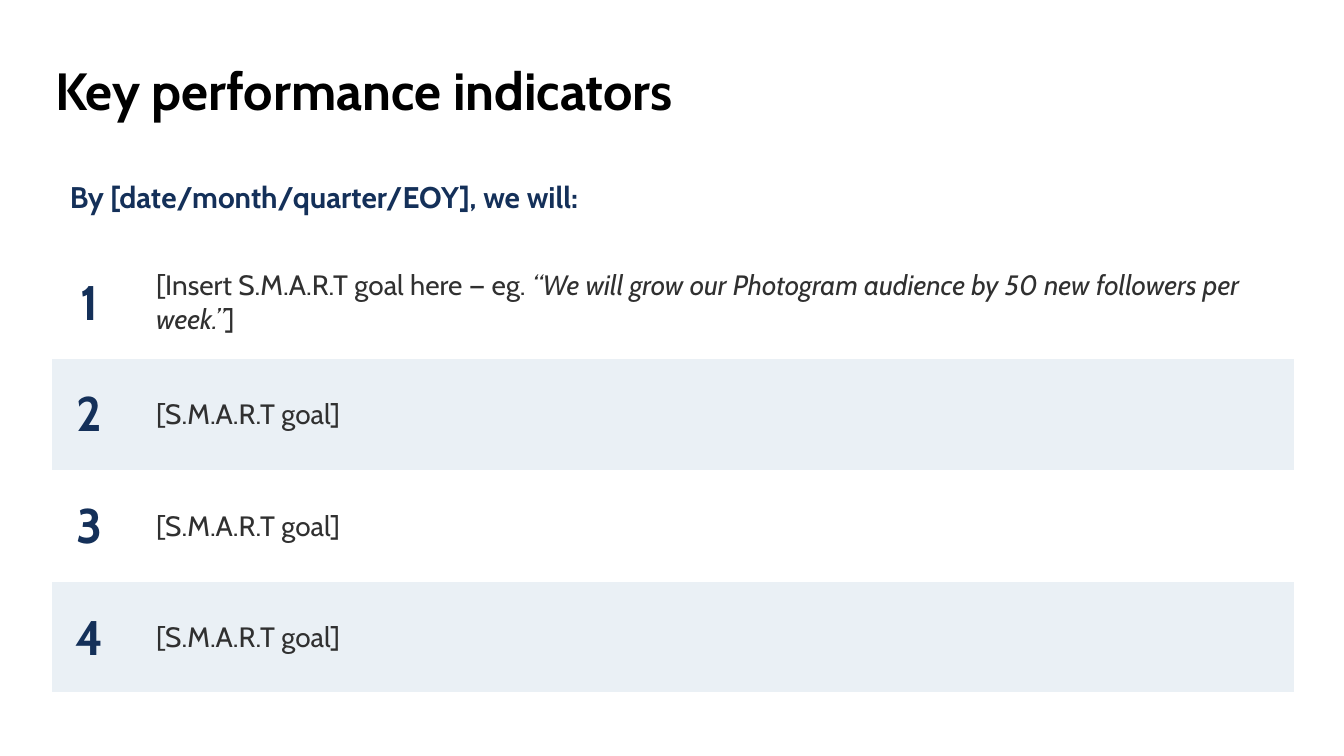
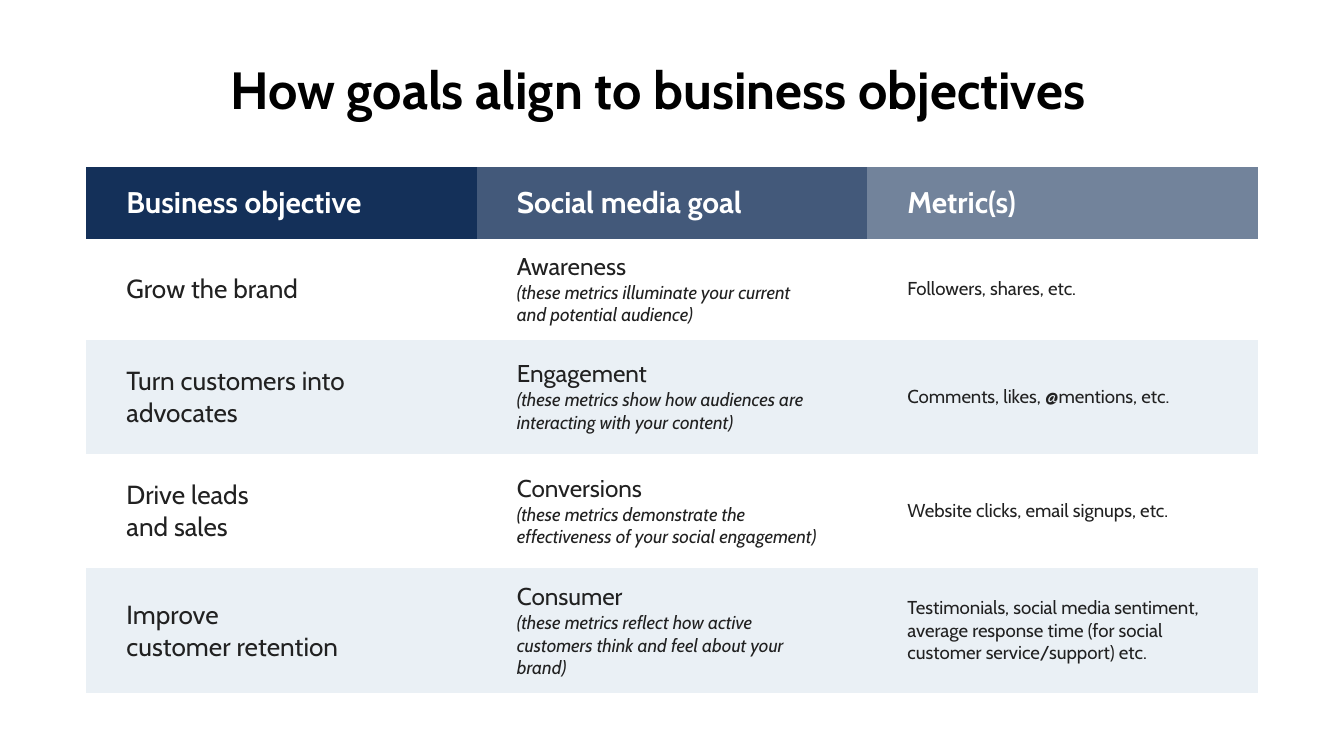
from lxml.etree import SubElement
from pptx import Presentation
from pptx.dml.color import RGBColor
from pptx.enum.shapes import MSO_SHAPE
from pptx.enum.text import MSO_ANCHOR, MSO_AUTO_SIZE, PP_ALIGN
from pptx.oxml.ns import qn
from pptx.util import Cm, Pt

COLOURS = {
    "black": "000000", "white": "FFFFFF", "navy": "143059",
    "slate": "43597A", "steel": "72839B", "band": "EAF0F5",
    "goal": "303030", "body": "212121",
}
FONT = "Cabin"
NO_TABLE_STYLE = "{2D5ABB26-0587-4C30-8999-92F81FD0307C}"
INSET = 0.25

DEADLINE = "By [date/month/quarter/EOY], we will:"
GOALS = [
    [("[Insert S.M.A.R.T goal here — eg. ", {}),
     ("“We will grow our Photogram audience by 50 new followers per week.”",
      {"italic": True}),
     ("]", {})],
    "[S.M.A.R.T goal]",
    "[S.M.A.R.T goal]",
    "[S.M.A.R.T goal]",
]
GOAL_COLUMNS = [1.5, 22.05]
GOAL_ROW = 2.11

HEADERS = [("Business objective", "navy"), ("Social media goal", "slate"),
           ("Metric(s)", "steel")]
OBJECTIVES = [
    ("Grow the brand", "Awareness",
     "(these metrics illuminate your current \nand potential audience)",
     "Followers, shares, etc."),
    ("Turn customers into advocates", "Engagement",
     "(these metrics show how audiences are interacting with your content)",
     "Comments, likes, @mentions, etc."),
    ("Drive leads \nand sales", "Conversions",
     "(these metrics demonstrate the effectiveness of your social engagement)",
     "Website clicks, email signups, etc."),
    ("Improve \ncustomer retention", "Consumer",
     "(these metrics reflect how active customers think and feel about your brand)",
     "Testimonials, social media sentiment, average response time "
     "(for social customer service/support) etc."),
]
OBJECTIVE_COLUMNS = [7.38] * 3
OBJECTIVE_ROWS = [1.36, 1.91, 2.16, 2.16, 2.36]


def colour(name):
    return RGBColor.from_string(COLOURS[name])


def write(frame, text, size, color, bold=False, italic=False,
          align=PP_ALIGN.LEFT, spacing=1.0):
    """Fill a text frame with a string or with (text, format changes) pairs."""
    paragraph = frame.paragraphs[0]
    paragraph.alignment = align
    paragraph.line_spacing = spacing
    paragraph.space_before = paragraph.space_after = Pt(0)
    pieces = [(text, {})] if isinstance(text, str) else text
    for piece, changes in pieces:
        look = {"size": size, "bold": bold, "italic": italic} | changes
        for number, line in enumerate(piece.split("\n")):
            if number:
                paragraph.add_line_break()
            if not line:
                continue
            run = paragraph.add_run()
            run.text = line
            run.font.name = FONT
            run.font.size = Pt(look["size"])
            run.font.bold = look["bold"]
            run.font.italic = look["italic"]
            run.font.color.rgb = colour(color)


def set_box(shape, left, top, width, height, inset_left=INSET):
    shape.left, shape.top = Cm(left), Cm(top)
    shape.width, shape.height = Cm(width), Cm(height)
    frame = shape.text_frame
    frame.word_wrap = True
    frame.auto_size = MSO_AUTO_SIZE.NONE
    frame.vertical_anchor = MSO_ANCHOR.TOP
    frame.margin_left = Cm(inset_left)
    frame.margin_top = frame.margin_right = frame.margin_bottom = Cm(INSET)
    return frame


def add_titled_slide(presentation, title, box, align=PP_ALIGN.LEFT,
                     inset_left=INSET):
    slide = presentation.slides.add_slide(presentation.slide_layouts[5])
    frame = set_box(slide.shapes.title, *box, inset_left=inset_left)
    write(frame, title, 28, "black", bold=True, align=align, spacing=0.9)
    return slide


def add_plain_table(slide, left, top, columns, rows):
    table = slide.shapes.add_table(
        len(rows), len(columns), Cm(left), Cm(top),
        Cm(sum(columns)), Cm(sum(rows))).table
    table._tbl.tblPr.find(qn("a:tableStyleId")).text = NO_TABLE_STYLE
    for column, width in zip(table.columns, columns):
        column.width = Cm(width)
    for row, height in zip(table.rows, rows):
        row.height = Cm(height)
    return table


def add_outer_border(table, color, width):
    last_row, last_column = len(table.rows) - 1, len(table.columns) - 1
    for row in range(last_row + 1):
        for column in range(last_column + 1):
            properties = table.cell(row, column)._tc.get_or_add_tcPr()
            edges = {"a:lnL": column == 0, "a:lnR": column == last_column,
                     "a:lnT": row == 0, "a:lnB": row == last_row}
            for tag, outer in edges.items():
                if outer:
                    line = SubElement(properties, qn(tag), w=str(Pt(width)))
                    fill = SubElement(line, qn("a:solidFill"))
                    SubElement(fill, qn("a:srgbClr"), val=COLOURS[color])


def fill_cell(cell, text, fill, left=INSET, right=INSET, **look):
    cell.fill.solid()
    cell.fill.fore_color.rgb = colour(fill)
    cell.vertical_anchor = MSO_ANCHOR.MIDDLE
    cell.margin_left, cell.margin_right = Cm(left), Cm(right)
    cell.margin_top = cell.margin_bottom = Cm(INSET)
    write(cell.text_frame, text, **look)


def band(row):
    return "band" if row % 2 else "white"


def build_indicators(presentation):
    slide = add_titled_slide(presentation, "Key performance indicators",
                             (0.89, 0.99, 21.2, 1.5), inset_left=0.15)
    deadline = slide.shapes.add_shape(MSO_SHAPE.RECTANGLE, 0, 0, 0, 0)
    deadline.shadow.inherit = False
    deadline.fill.solid()
    deadline.fill.fore_color.rgb = colour("white")
    deadline.line.fill.background()
    frame = set_box(deadline, 1.07, 3, 23.09, 1.35)
    write(frame, DEADLINE, 16, "navy", bold=True, spacing=1.2)

    table = add_plain_table(slide, 0.94, 4.67, GOAL_COLUMNS,
                            [GOAL_ROW] * len(GOALS))
    add_outer_border(table, "white", 2.25)
    for row, goal in enumerate(GOALS):
        fill_cell(table.cell(row, 0), str(row + 1), band(row), size=26,
                  color="navy", bold=True, align=PP_ALIGN.CENTER)
        fill_cell(table.cell(row, 1), goal, band(row), left=0.51, size=15,
                  color="goal")


def build_objectives(presentation):
    slide = add_titled_slide(
        presentation, "How goals align to business objectives",
        (1.04, 0.97, 22.78, 1.75), align=PP_ALIGN.CENTER)
    table = add_plain_table(slide, 1.63, 3.15, OBJECTIVE_COLUMNS,
                            OBJECTIVE_ROWS)
    side = {"left": 0.76, "right": 0.76}
    for column, (header, fill) in enumerate(HEADERS):
        fill_cell(table.cell(0, column), header, fill, size=16,
                  color="white", bold=True, **side)
    for row, (objective, goal, meaning, metrics) in enumerate(OBJECTIVES):
        social_goal = [(goal + "\n", {"size": 13}),
                       (meaning, {"italic": True})]
        cells = [(objective, 14), (social_goal, 10), (metrics, 10)]
        for column, (text, size) in enumerate(cells):
            fill_cell(table.cell(row + 1, column), text, band(row),
                      size=size, color="body", **side)


def main():
    presentation = Presentation()
    presentation.slide_width, presentation.slide_height = Cm(25.4), Cm(14.29)
    build_indicators(presentation)
    build_objectives(presentation)
    presentation.save("out.pptx")


if __name__ == "__main__":
    main()
